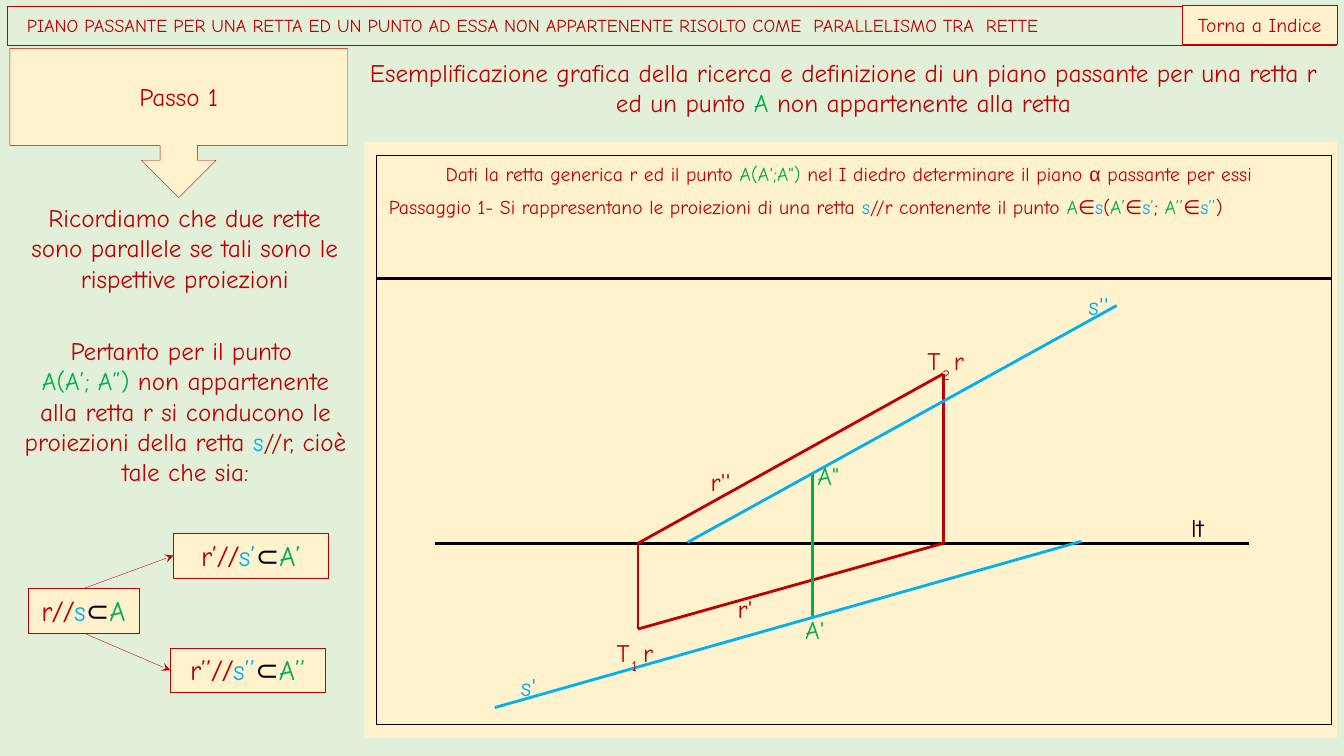
from pptx import Presentation
from pptx.dml.color import RGBColor
from pptx.enum.shapes import MSO_CONNECTOR, MSO_SHAPE
from pptx.enum.text import MSO_ANCHOR as Anchor, MSO_AUTO_SIZE as AutoSize, PP_ALIGN as Align
from pptx.oxml.ns import qn
from pptx.util import Cm, Pt
from lxml.etree import SubElement

RED = RGBColor(0xC0, 0x00, 0x00)
GREEN = RGBColor(0x00, 0xB0, 0x50)
BLUE = RGBColor(0x00, 0xB0, 0xF0)
BLACK = RGBColor(0x00, 0x00, 0x00)
CREAM = RGBColor(0xFF, 0xF2, 0xCC)
PALE_GREEN = RGBColor(0xE2, 0xF0, 0xD9)
FONT = "Comic Neue"

TITLE = ("PIANO PASSANTE PER UNA RETTA ED UN PUNTO AD ESSA NON APPARTENENTE "
         "RISOLTO COME  PARALLELISMO TRA  RETTE")


def write(frame, paragraphs, size, align=Align.CENTER):
    """Each paragraph is a list of (text, colour) or (text, colour, font)."""
    for index, runs in enumerate(paragraphs):
        paragraph = frame.add_paragraph() if index else frame.paragraphs[0]
        paragraph.alignment = align
        for text, colour, *font in runs:
            run = paragraph.add_run()
            run.text = text
            run.font.size = Pt(size)
            run.font.name = font[0] if font else FONT
            run.font.color.rgb = colour


def add_box(slide, left, top, width, height, fill=CREAM, line=RED, weight=0.25,
            kind=MSO_SHAPE.RECTANGLE):
    shape = slide.shapes.add_shape(kind, Cm(left), Cm(top), Cm(width), Cm(height))
    shape.shadow.inherit = False
    if fill is None:
        shape.fill.background()
    else:
        shape.fill.solid()
        shape.fill.fore_color.rgb = fill
    if line is None:
        shape.line.fill.background()
    else:
        shape.line.color.rgb = line
        shape.line.width = Pt(weight)
    return shape


def add_text(slide, left, top, width, height, paragraphs, size=18, align=Align.CENTER):
    frame = slide.shapes.add_textbox(Cm(left), Cm(top), Cm(width), Cm(height)).text_frame
    frame.word_wrap = True
    write(frame, paragraphs, size, align)
    return frame


def remove_margins(frame):
    frame.margin_left = frame.margin_top = frame.margin_right = frame.margin_bottom = 0


def add_label(slide, left, top, text, colour, subscript=False):
    frame = add_text(slide, left, top, 0.75, 0.76, [[(text, colour)]], align=Align.LEFT)
    remove_margins(frame)
    frame.word_wrap = False
    frame.auto_size = AutoSize.SHAPE_TO_FIT_TEXT
    if subscript:
        frame.paragraphs[0].runs[0].font._element.set("baseline", "-25000")


def add_trace_label(slide, left, top, number):
    add_label(slide, left, top, "T", RED)
    add_label(slide, left + 0.38, top + 0.09, number, RED, subscript=True)
    add_label(slide, left + 0.67, top, "r", RED)


def add_line(slide, x1, y1, x2, y2, colour, weight=0):
    line = slide.shapes.add_connector(MSO_CONNECTOR.STRAIGHT, Cm(x1), Cm(y1), Cm(x2), Cm(y2))
    line.line.color.rgb = colour
    line.line.width = Pt(weight)
    SubElement(line._element.spPr, qn("a:effectLst"))
    return line


def add_relation(slide, left, top, width, mark):
    box = add_box(slide, left, top, width, 1.12)
    box.text_frame.vertical_anchor = Anchor.TOP
    write(box.text_frame, [[("r" + mark, RED), ("//", RED, "Calibri"), ("s" + mark, BLUE),
                            ("⊂", BLACK, "Calibri"), ("A" + mark, GREEN)]], 20)
    return box


def add_arrow(slide, start, start_site, end):
    arrow = add_line(slide, 0, 0, 1, 1, RED, 0.25)
    arrow.begin_connect(start, start_site)
    arrow.end_connect(end, 1)
    SubElement(arrow.line._get_or_add_ln(), qn("a:tailEnd"), type="stealth")


def add_header(slide):
    callout = add_box(slide, 0.25, 1.22, 8.51, 3.76, kind=MSO_SHAPE.DOWN_ARROW_CALLOUT)
    write(callout.text_frame, [[("Passo 1", RED)]], 18)
    add_text(slide, 8.76, 1.32, 24.99, 1.8, [[
        ("Esemplificazione grafica della ricerca e definizione di un piano passante "
         "per una retta r ed un punto ", RED),
        ("A", GREEN), (" non appartenente alla retta", RED)]])
    bar = add_box(slide, 0.18, 0.15, 33.5, 0.99, fill=None)
    bar.text_frame.margin_left = Cm(0.5)
    write(bar.text_frame, [[(TITLE, RED)]], 13, Align.LEFT)
    button = add_box(slide, 29.79, 0.13, 3.91, 0.99)
    write(button.text_frame, [[("Torna a Indice", RED)]], 14)


def add_drawing(slide):
    # Panel, frame and divider
    add_box(slide, 9.19, 3.58, 24.51, 15.01, line=None)
    add_box(slide, 9.5, 3.91, 24.05, 14.35, fill=None, line=BLACK, weight=0)
    add_line(slide, 9.5, 7.01, 33.55, 7.01, BLACK)

    # Problem and step
    problem = add_text(slide, 9.45, 4.09, 24.05, 0.61, [[
        ("Dati la retta generica r ed il punto ", RED), ("A(A';A\") ", GREEN),
        ("nel I diedro determinare il piano ", RED), ("α", RED, "Arial"),
        (" passante per essi ", RED)]], 14)
    remove_margins(problem)
    add_text(slide, 9.55, 4.78, 24.18, 0.86, [[
        ("Passaggio 1- Si rappresentano le proiezioni di una retta", RED), (" s", BLUE),
        ("//r contenente il punto ", RED), ("A", GREEN), ("∈", RED), ("s", BLUE), ("(", RED),
        ("A’", GREEN), ("∈", RED), ("s’", BLUE), ("; ", RED),
        ("A’’", GREEN), ("∈", RED), ("s’’", BLUE), (")", RED)]], 14, Align.LEFT)

    # Ground line, line r with its traces, point A, line s
    ground, trace_1, trace_2 = 13.69, 16.08, 23.77
    add_line(slide, 10.97, ground, 31.47, ground, BLACK)
    add_line(slide, trace_1, ground, trace_2, 9.42, RED)
    add_line(slide, trace_1, 15.85, trace_2, ground, RED)
    add_line(slide, trace_1, ground, trace_1, 15.85, RED)
    add_line(slide, trace_2, ground, trace_2, 9.42, RED)
    add_line(slide, 20.47, 11.91, 20.47, 15.57, GREEN)
    add_line(slide, 17.32, 13.67, 28.14, 7.7, BLUE)
    add_line(slide, 12.47, 17.83, 27.25, 13.64, BLUE)

    # Labels
    for left, top, text, colour in [
            (30.02, 12.9, "lt", BLACK),
            (20.29, 15.47, "A'", GREEN), (20.6, 11.61, "A\"", GREEN),
            (18.59, 14.96, "r'", RED), (17.91, 11.76, "r''", RED),
            (13.13, 16.92, "s'", BLUE), (27.43, 7.32, "s''", BLUE)]:
        add_label(slide, left, top, text, colour)
    add_trace_label(slide, 15.54, 16.05, "1")
    add_trace_label(slide, 23.37, 8.71, "2")


def add_explanation(slide):
    add_text(slide, 0.25, 4.98, 8.81, 2.57, [[
        ("Ricordiamo che due rette sono parallele se tali sono le rispettive proiezioni", RED)]])
    add_text(slide, 0.33, 8.33, 8.69, 4.11, [
        [("Pertanto per il punto ", RED)],
        [("A(A’; A”) ", GREEN),
         ("non appartenente alla retta r si conducono le proiezioni della retta ", RED),
         ("s", BLUE), ("//r, cioè tale che sia:", RED)]])

    # Relations between lines and projections
    space = add_relation(slide, 0.71, 14.83, 2.79, "")
    second = add_relation(slide, 4.29, 16.33, 3.91, "’’")
    first = add_relation(slide, 4.37, 13.44, 3.91, "’")
    add_arrow(slide, space, 0, first)
    add_arrow(slide, space, 2, second)


def main():
    presentation = Presentation()
    presentation.slide_width, presentation.slide_height = Cm(33.87), Cm(19.05)
    slide = presentation.slides.add_slide(presentation.slide_layouts[6])
    slide.background.fill.solid()
    slide.background.fill.fore_color.rgb = PALE_GREEN
    add_header(slide)
    add_drawing(slide)
    add_explanation(slide)
    presentation.save("out.pptx")


if __name__ == "__main__":
    main()
